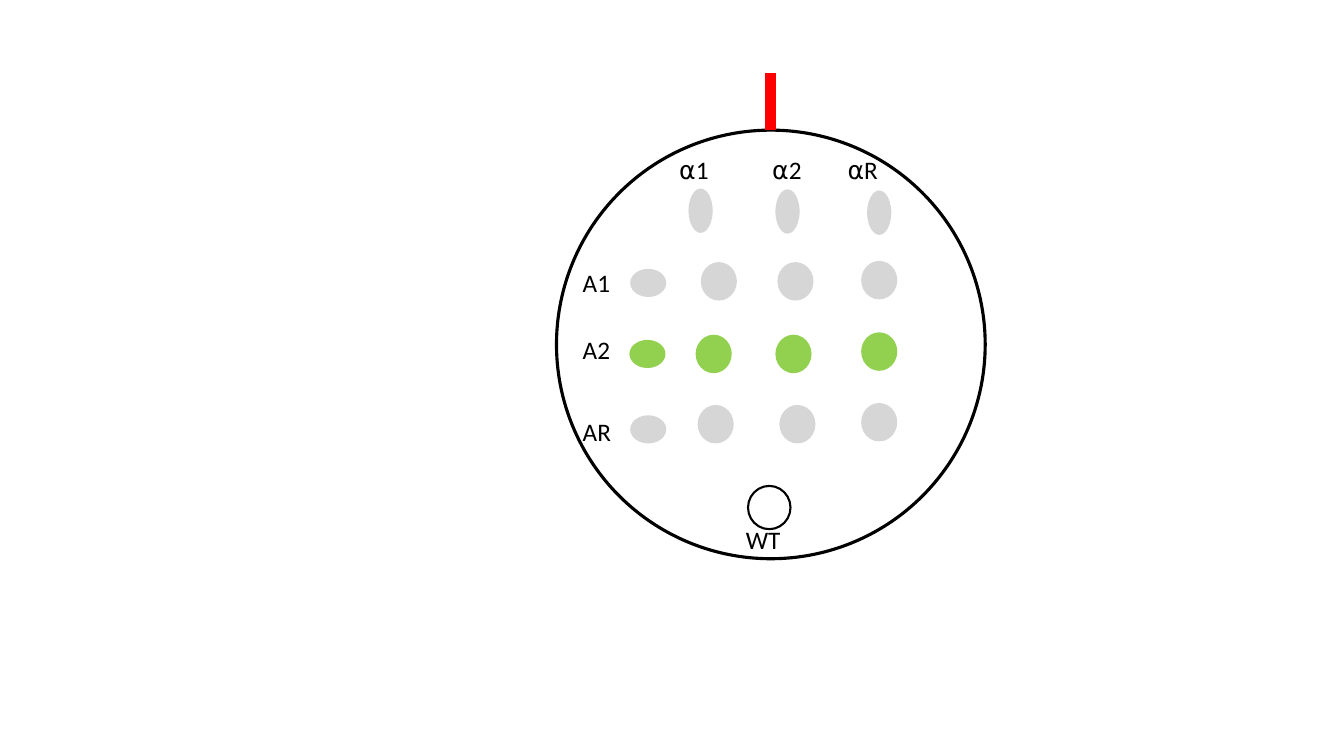
import pptx
import pptx.dml.color
import pptx.enum.shapes
import pptx.enum.text
import pptx.oxml
import pptx.oxml.ns
import pptx.util
from pptx.util import Cm

BLACK, RED, GREEN = "000000", "FF0000", "92D050"
LABEL_HEIGHT = 1.24
LABEL_TOP = 3.76
ROW_LABEL_LEFT = 14.43
ROW_LABEL_WIDTH = 1.9

# Column label, label left, label width, centre of the upright spot
COLUMNS = [
    ("⍺1", 16.59, 1.78, (17.65, 5.31)),
    ("⍺2", 18.77, 2.11, (19.84, 5.33)),
    ("⍺R", 20.68, 2.11, (22.15, 5.36)),
]
# Row label, label top, colour, opacity, centre of the parent spot, centres of the crosses
ROWS = [
    ("A1", 6.6, BLACK, 16, (16.33, 7.13), [(18.11, 7.09), (20.04, 7.09), (22.15, 7.06)]),
    ("A2", 8.31, GREEN, 100, (16.31, 8.92), [(17.98, 8.92), (19.99, 8.92), (22.15, 8.86)]),
    ("AR", 10.36, BLACK, 16, (16.33, 10.82), [(18.03, 10.69), (20.09, 10.69), (22.15, 10.64)]),
]


def color(hex_string):
    return pptx.dml.color.RGBColor.from_string(hex_string)


class PlateDrawing:
    font_name = "Calibri"
    font_size = 18

    def __init__(self, slide):
        self.shapes = slide.shapes.add_group_shape().shapes

    def ellipse(self, center, size, fill=None, opacity=100, line=None, line_width=1.5, rotation=0):
        """Draw an ellipse around a centre point, in centimetres."""
        left, top = (middle - length / 2 for middle, length in zip(center, size))
        shape = self.shapes.add_shape(
            pptx.enum.shapes.MSO_SHAPE.OVAL, Cm(left), Cm(top), Cm(size[0]), Cm(size[1]))
        shape.shadow.inherit = False
        shape.rotation = rotation
        if fill:
            shape.fill.solid()
            shape.fill.fore_color.rgb = color(fill)
            if opacity < 100:
                fill_color = shape._element.spPr.find(".//" + pptx.oxml.ns.qn("a:srgbClr"))
                alpha = pptx.oxml.parse_xml(
                    f'<a:alpha {pptx.oxml.ns.nsdecls("a")} val="{opacity * 1000}"/>')
                fill_color.append(alpha)
        else:
            shape.fill.background()
        if line:
            shape.line.color.rgb = color(line)
            shape.line.width = pptx.util.Pt(line_width)
        else:
            shape.line.fill.background()

    def label(self, text, left, top, width, align=pptx.enum.text.PP_ALIGN.LEFT):
        box = self.shapes.add_textbox(Cm(left), Cm(top), Cm(width), Cm(LABEL_HEIGHT))
        frame = box.text_frame
        frame.word_wrap = True
        frame.auto_size = pptx.enum.text.MSO_AUTO_SIZE.SHAPE_TO_FIT_TEXT
        paragraph = frame.paragraphs[0]
        paragraph.alignment = align
        run = paragraph.add_run()
        run.text = text
        run.font.name = self.font_name
        run.font.size = pptx.util.Pt(self.font_size)
        run.font.color.rgb = color(BLACK)

    def line(self, start, end, line_color, width):
        connector = self.shapes.add_connector(
            pptx.enum.shapes.MSO_CONNECTOR.STRAIGHT,
            Cm(start[0]), Cm(start[1]), Cm(end[0]), Cm(end[1]))
        connector.line.color.rgb = color(line_color)
        connector.line.width = pptx.util.Pt(width)
        connector._element.spPr.append(
            pptx.oxml.parse_xml(f'<a:effectLst {pptx.oxml.ns.nsdecls("a")}/>'))


def main():
    presentation = pptx.Presentation()
    presentation.slide_width = pptx.util.Inches(13.33)
    presentation.slide_height = pptx.util.Inches(7.5)
    slide = presentation.slides.add_slide(presentation.slide_layouts[6])
    drawing = PlateDrawing(slide)

    drawing.ellipse((19.42, 8.68), (10.8, 10.8), line=BLACK, line_width=2.25)
    for text, left, width, center in COLUMNS:
        drawing.ellipse(center, (0.61, 1.12), fill=BLACK, opacity=16)
        drawing.label(text, left, LABEL_TOP, width, align=pptx.enum.text.PP_ALIGN.CENTER)
    for text, top, fill, opacity, parent, crosses in ROWS:
        drawing.label(text, ROW_LABEL_LEFT, top, ROW_LABEL_WIDTH)
        drawing.ellipse(parent, (0.71, 0.91), fill=fill, opacity=opacity, rotation=90)
        for center in crosses:
            drawing.ellipse(center, (0.91, 0.97), fill=fill, opacity=opacity)

    drawing.ellipse((19.38, 12.79), (1.07, 1.09), line=BLACK)
    drawing.label("WT", 18.54, 13.08, ROW_LABEL_WIDTH)
    drawing.line((19.41, 1.85), (19.41, 3.28), RED, 7.75)

    presentation.save("out.pptx")


if __name__ == "__main__":
    main()
